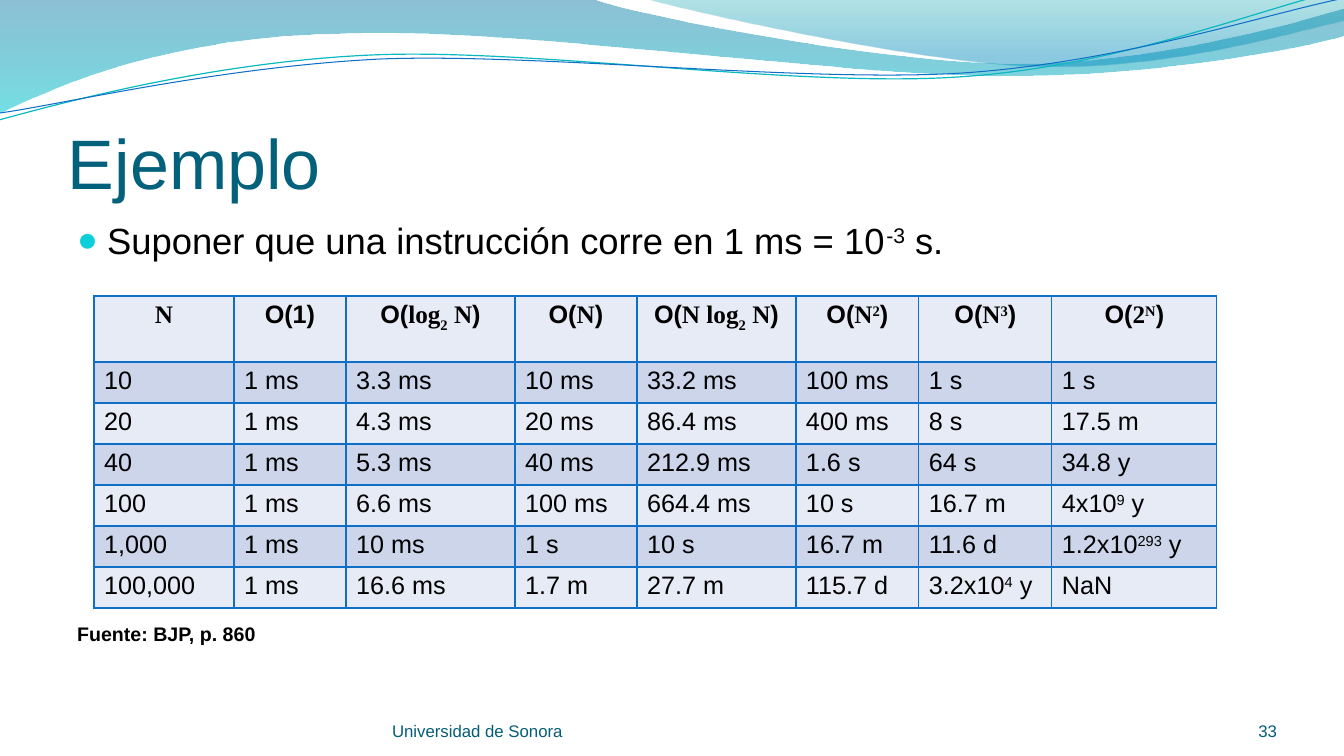
from dataclasses import dataclass

from lxml.etree import SubElement as Sub
from pptx import Presentation
from pptx.dml.color import RGBColor as Rgb
from pptx.enum.text import MSO_ANCHOR as Anchor, MSO_AUTO_SIZE as Auto, PP_ALIGN as Align
from pptx.oxml import parse_xml
from pptx.oxml.ns import nsdecls, qn
from pptx.util import Pt

UNIT = 12192000 / 1344


@dataclass(frozen=True)
class Theme:
    """Colours, faces and type sizes of the slide."""
    sans: str = "Arial"
    serif: str = "Times New Roman"
    ink: str = "000000"
    head: str = "04617B"
    foot: str = "045D75"
    dot: str = "0BD0D9"
    edge: str = "0F6FC6"
    teal: str = "0AB8BF"
    light: str = "E7EBF5"
    dark: str = "CCD5EA"
    big: int = 50
    body: int = 26
    cell: int = 18
    note: int = 14
    small: int = 12


LOOK = Theme()

BANDS = [
    ([(0, 0), (592, -1),
      ((639, 17), (892, 64), (1019, 64)), ((1147, 64), (1288, 26), (1344, 9)),
      (1346, 36),
      ((1321, 44), (1169, 77), (1002, 76)), ((836, 76), (513, 28), (346, 34)),
      ((173, 36), (61, 84), (-1, 114))],
     [("0074A1", 45, 0), ("00C6CF", 55, 1)]),
    ([(644, -1), ((684, 11), (916, 62), (1033, 66)),
      ((1169, 70), (1292, 32), (1344, 21)), (1344, 0)],
     [("00A1A9", 30, 0), ("008BBF", 45, 0.8)]),
]
LINES = [
    ([(-1, 120), ((65, 102), (213, 62), (372, 55)),
      ((531, 48), (796, 88), (958, 77)), ((1119, 67), (1262, 8), (1342, -10))],
     LOOK.teal, 0.85),
    ([(0, 113), ((64, 104), (220, 67), (381, 59)),
      ((541, 53), (802, 83), (963, 73)), ((1124, 62), (1265, 14), (1345, -2))],
     LOOK.edge, 0.75),
]
COLS = [140, 112, 169, 122, 159, 123, 133, 165]
ROWS = [
    ["`N`", "O(1)", "O(`log_2_ N`)", "O(`N`)", "O(`N log_2_ N`)",
     "O(`N^2^`)", "O(`N^3^`)", "O(`2^N^`)"],
    ["10", "1 ms", "3.3 ms", "10 ms", "33.2 ms", "100 ms", "1 s", "1 s"],
    ["20", "1 ms", "4.3 ms", "20 ms", "86.4 ms", "400 ms", "8 s", "17.5 m"],
    ["40", "1 ms", "5.3 ms", "40 ms", "212.9 ms", "1.6 s", "64 s", "34.8 y"],
    ["100", "1 ms", "6.6 ms", "100 ms", "664.4 ms", "10 s", "16.7 m", "4x10^9^ y"],
    ["1,000", "1 ms", "10 ms", "1 s", "10 s", "16.7 m", "11.6 d", "1.2x10^293^ y"],
    ["100,000", "1 ms", "16.6 ms", "1.7 m", "27.7 m", "115.7 d", "3.2x10^4^ y", "NaN"],
]


def px(num):
    """Turn pixels into EMU."""
    return round(num * UNIT)


def place(shape, box):
    """Move a shape to a box in pixels."""
    shape.left, shape.top, shape.width, shape.height = map(px, box)


def write(par, text, size, ink=LOOK.ink, bold=False, align=Align.LEFT):
    """Write text where ` toggles serif, ^ raised and _ lowered type."""
    par.alignment = align
    font = par.font
    font.name, font.size, font.bold = LOOK.sans, Pt(size), bold
    font.color.rgb = Rgb.from_string(ink)
    for face, chunk in enumerate(text.split("`")):
        for high, part in enumerate(chunk.split("^")):
            for low, bit in enumerate(part.split("_")):
                if not bit:
                    continue
                run = par.add_run()
                run.text = bit
                if face % 2:
                    run.font.name = LOOK.serif
                if high % 2 or low % 2:
                    base = 30000 if high % 2 else -25000
                    run.font._element.set("baseline", str(base))


def outline(slide, nodes, box, close):
    """Draw a flat outline of corners and Bezier curves inside a box."""
    curved = [isinstance(node[0], tuple) for node in nodes]
    flat = [p for node, bent in zip(nodes, curved) for p in (node if bent else [node])]
    pts = [(px(box[0] + x), px(box[1] + y)) for x, y in flat]
    pen = slide.shapes.build_freeform(*pts[0])
    pen.add_line_segments(pts[1:], close=close)
    shape = pen.convert_to_shape()
    shape.shadow.inherit = False
    steps = iter(list(shape._element.iter(qn("a:lnTo"))))
    for bent in curved[1:]:
        step = next(steps)
        if bent:
            step.tag = qn("a:cubicBezTo")
            for _ in range(2):
                extra = next(steps)
                step.append(extra[0])
                extra.getparent().remove(extra)
    return shape


def waves(slide, box):
    """Draw the bands and lines along the top."""
    for nodes, stops in BANDS:
        band = outline(slide, nodes, box, True)
        band.line.fill.background()
        band.fill.gradient()
        band.fill.gradient_angle = 270
        for stop, (tint, alpha, pos) in zip(band.fill.gradient_stops, stops):
            stop.color.rgb = Rgb.from_string(tint)
            stop.position = pos
            tone = stop._gs.find(qn("a:srgbClr"))
            Sub(tone, qn("a:alpha")).set("val", str(alpha * 1000))
    for nodes, tint, width in LINES:
        line = outline(slide, nodes, box, False)
        line.fill.background()
        line.line.color.rgb = Rgb.from_string(tint)
        line.line.width = Pt(width)


def title(slide, box, text):
    """Fill the title placeholder."""
    shape = slide.shapes.title
    place(shape, box)
    frame = shape.text_frame
    frame.auto_size, frame.vertical_anchor = Auto.NONE, Anchor.BOTTOM
    frame.margin_left = frame.margin_right = frame.margin_bottom = 0
    write(frame.paragraphs[0], text, LOOK.big, LOOK.head)


def bullet(par, inset):
    """Give a paragraph a round bullet."""
    props = par._p.get_or_add_pPr()
    props.set("marL", str(px(inset)))
    props.set("indent", str(-px(inset)))
    for item in (f'buClr {nsdecls("a")}><a:srgbClr val="{LOOK.dot}"/></a:buClr>',
                 f'buSzPct {nsdecls("a")} val="95000"/>',
                 f'buChar {nsdecls("a")} char="●"/>'):
        props.append(parse_xml("<a:" + item))


def body(slide, box, text, source):
    """Fill the body with a bullet and the source below the table."""
    shape = slide.placeholders[1]
    place(shape, box)
    frame = shape.text_frame
    frame.auto_size, frame.vertical_anchor = Auto.NONE, Anchor.TOP
    first, last = frame.paragraphs[0], frame.add_paragraph()
    first.space_before, last.space_before = Pt(5), Pt(257)
    bullet(first, 30)
    props = last._p.get_or_add_pPr()
    props.set("marL", "0")
    props.set("indent", "0")
    Sub(props, qn("a:buNone"))
    write(first, text, LOOK.body)
    write(last, source, LOOK.note, bold=True)


def border(cell):
    """Draw the four edges of a cell."""
    props = cell._tc.get_or_add_tcPr()
    for spot, side in enumerate("LRTB"):
        props.insert(spot, parse_xml(
            f'<a:ln{side} {nsdecls("a")} w="12700"><a:solidFill>'
            f'<a:srgbClr val="{LOOK.edge}"/></a:solidFill></a:ln{side}>'))


def grid(slide, box):
    """Build the table of running times."""
    table = slide.shapes.add_table(len(ROWS), len(COLS), *map(px, box)).table
    table.first_row = table.horz_banding = False
    for col, width in zip(table.columns, COLS):
        col.width = px(width)
    for r, row in enumerate(ROWS):
        table.rows[r].height = px(41 if r else 66)
        for c, text in enumerate(row):
            cell = table.cell(r, c)
            cell.fill.solid()
            cell.fill.fore_color.rgb = Rgb.from_string(LOOK.dark if r % 2 else LOOK.light)
            border(cell)
            write(cell.text_frame.paragraphs[0], text, LOOK.cell, bold=not r,
                  align=Align.LEFT if r else Align.CENTER)


def footer(slide, box, text, align):
    """Place one footer text."""
    frame = slide.shapes.add_textbox(*map(px, box)).text_frame
    frame.word_wrap, frame.vertical_anchor = True, Anchor.BOTTOM
    frame.margin_left = frame.margin_right = frame.margin_top = frame.margin_bottom = 0
    write(frame.paragraphs[0], text, LOOK.small, LOOK.foot, align=align)


def main():
    """Build and save the slide."""
    deck = Presentation()
    deck.slide_width, deck.slide_height = px(1344), px(756)
    slide = deck.slides.add_slide(deck.slide_layouts[1])
    waves(slide, (0, 0, 1344, 120))
    title(slide, (68, 78, 1210, 126), "Ejemplo")
    body(slide, (67, 213, 1210, 484),
         "Suponer que una instrucción corre en 1 ms = 10^-3^ s.", "Fuente: BJP, p. 860")
    grid(slide, (94, 296, sum(COLS), 312))
    footer(slide, (392, 701, 493, 40), "Universidad de Sonora", Align.LEFT)
    footer(slide, (1165, 701, 112, 40), "33", Align.RIGHT)
    deck.save("out.pptx")


if __name__ == "__main__":
    main()
